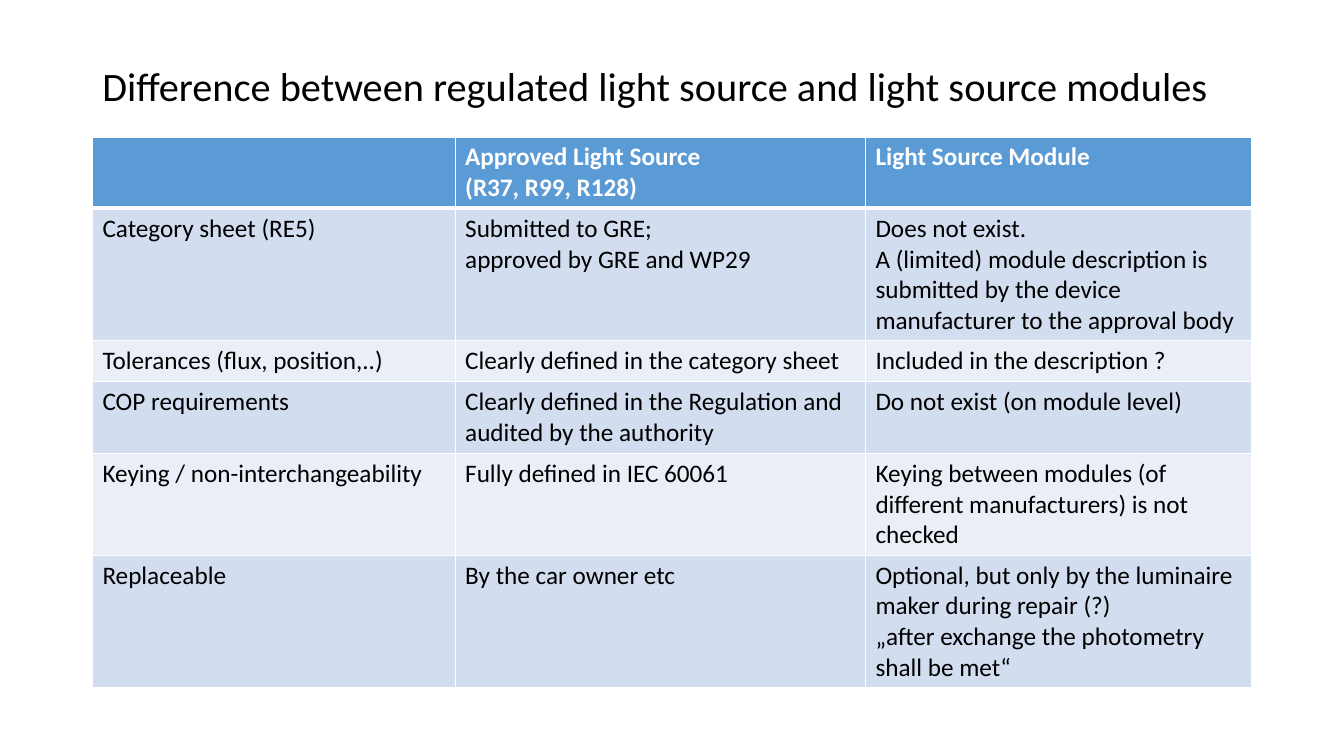
from dataclasses import dataclass

from lxml.etree import SubElement
from pptx import Presentation
from pptx.dml.color import RGBColor
from pptx.enum.text import MSO_ANCHOR
from pptx.oxml.ns import qn
from pptx.slide import Slide
from pptx.table import _Cell
from pptx.text.text import _Paragraph
from pptx.util import Cm, Pt

COLORS = {
    "head": "5B9BD5",
    "dark": "D2DEEF",
    "light": "EAEFF7",
    "white": "FFFFFF",
    "black": "000000",
}
FONT = "Calibri"
LEFT, WIDTH = Cm(2.33), Cm(29.21)
COLS = (9.14, 10.34, 9.73)
PAD, LINE = 0.26, 0.77


@dataclass(frozen=True)
class Row:
    """One table row; a newline in a cell starts a new paragraph."""
    cells: tuple[str, str, str]
    lines: int


ROWS = (
    Row(("", "Approved Light Source\n(R37, R99, R128)", "Light Source Module"), 2),
    Row(("Category sheet (RE5)",
         "Submitted to GRE;\napproved by GRE and WP29",
         "Does not exist.\nA (limited) module description is submitted "
         "by the device manufacturer to the approval body"), 4),
    Row(("Tolerances (flux, position,..)",
         "Clearly defined in the category sheet",
         "Included in the description ?"), 1),
    Row(("COP requirements",
         "Clearly defined in the Regulation and audited by the authority",
         "Do not exist (on module level)"), 2),
    Row(("Keying / non-interchangeability",
         "Fully defined in IEC 60061",
         "Keying between modules (of different manufacturers) is not checked"), 3),
    Row(("Replaceable",
         "By the car owner etc",
         "Optional, but only by the luminaire maker during repair (?)\n"
         "„after exchange the photometry shall be met“"), 4),
)


def rgb(name: str) -> RGBColor:
    return RGBColor.from_string(COLORS[name])


def add_run(para: _Paragraph, text: str, size: float, color: str,
            bold: bool = False) -> None:
    run = para.add_run()
    run.text = text
    font = run.font
    font.name, font.size, font.bold = FONT, Pt(size), bold
    font.color.rgb = rgb(color)


def add_edges(cell: _Cell, top: float, bottom: float) -> None:
    """Draw white borders, with the given top and bottom widths in points."""
    props = cell._tc.get_or_add_tcPr()
    edges = {"lnL": 1, "lnR": 1, "lnT": top, "lnB": bottom}
    for spot, (tag, width) in enumerate(edges.items()):
        line = SubElement(props, qn(f"a:{tag}"), w=str(Pt(width)))
        fill = SubElement(line, qn("a:solidFill"))
        SubElement(fill, qn("a:srgbClr"), val=COLORS["white"])
        props.insert(spot, line)


def add_title(slide: Slide, text: str) -> None:
    box = slide.shapes.add_textbox(LEFT, Cm(1.01), WIDTH, Cm(2.44))
    frame = box.text_frame
    frame.word_wrap = True
    frame.vertical_anchor = MSO_ANCHOR.MIDDLE
    para = frame.paragraphs[0]
    para.line_spacing = 0.9
    add_run(para, text, 28.8, "black")


def fill_cell(cell: _Cell, text: str, index: int) -> None:
    head = index == 0
    shade = "head" if head else "dark" if index % 2 else "light"
    cell.fill.solid()
    cell.fill.fore_color.rgb = rgb(shade)
    add_edges(cell, top=3 if index == 1 else 1, bottom=3 if head else 1)
    frame = cell.text_frame
    for spot, part in enumerate(text.splitlines()):
        para = frame.add_paragraph() if spot else frame.paragraphs[0]
        add_run(para, part, 18, "white" if head else "black", bold=head)


def add_grid(slide: Slide, rows: tuple[Row, ...]) -> None:
    tall = [Cm(PAD + LINE * row.lines) for row in rows]
    shape = slide.shapes.add_table(
        len(rows), len(COLS), LEFT, Cm(3.45), WIDTH, sum(tall))
    grid = shape.table
    for col, width in zip(grid.columns, COLS):
        col.width = Cm(width)
    for index, row in enumerate(rows):
        grid.rows[index].height = tall[index]
        for cell, text in zip(grid.rows[index].cells, row.cells):
            fill_cell(cell, text, index)


def main() -> None:
    deck = Presentation()
    deck.slide_width, deck.slide_height = Cm(33.87), Cm(19.05)
    slide = deck.slides.add_slide(deck.slide_layouts[6])
    add_title(slide, "Difference between regulated light source "
                     "and light source modules")
    add_grid(slide, ROWS)
    deck.save("out.pptx")


if __name__ == "__main__":
    main()
